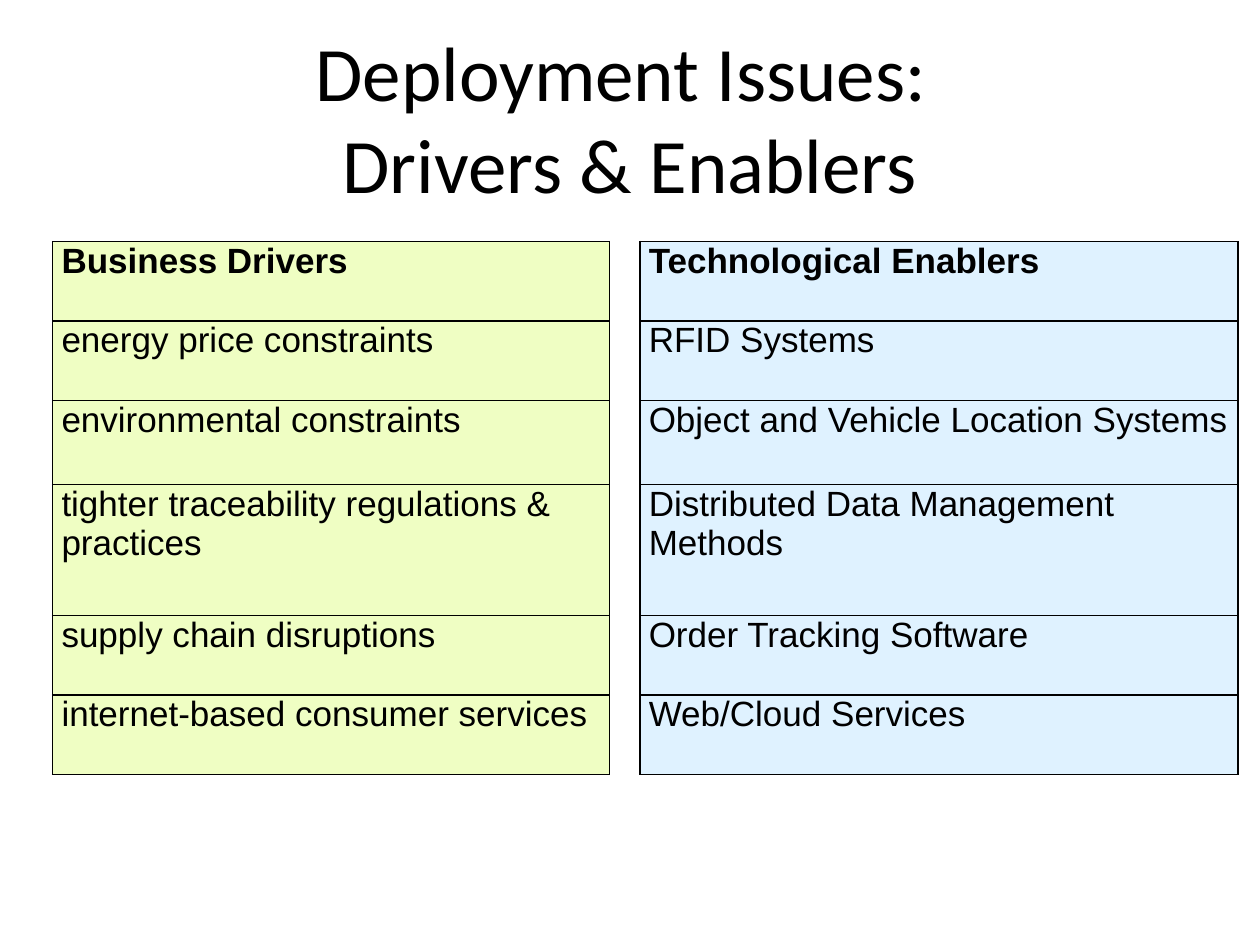
from dataclasses import dataclass

from lxml import etree
from pptx import Presentation
from pptx import util as u
from pptx.dml import color
from pptx.enum import text
from pptx.oxml import ns


@dataclass(frozen=True)
class Theme:
    ink: str = "000000"
    drivers: str = "EFFEC3"
    enablers: str = "DFF2FF"
    title_font: str = "Calibri"
    table_font: str = "Arial"
    title_size: int = 44
    table_size: int = 20
    border: int = 1


THEME = Theme()
TITLE = "Deployment Issues: \vDrivers & Enablers"
ROWS = [
    ("Business Drivers", "Technological Enablers"),
    ("energy price constraints", "RFID Systems"),
    ("environmental constraints", "Object and Vehicle Location Systems"),
    ("tighter traceability regulations & practices",
     "Distributed Data Management Methods"),
    ("supply chain disruptions", "Order Tracking Software"),
    ("internet-based consumer services", "Web/Cloud Services"),
]
COLUMN_WIDTHS = (11.23, 0.46, 12.06)
ROW_HEIGHTS = (1.6, 1.6, 1.7, 2.64, 1.6, 1.6)


def style_font(font, name, size, bold=False):
    font.name, font.size, font.bold = name, u.Pt(size), bold
    font.color.rgb = color.RGBColor.from_string(THEME.ink)


def add_title(page):
    box = page.shapes.add_textbox(u.Cm(1.27), u.Cm(0.76), u.Cm(22.86), u.Cm(3.18))
    frame = box.text_frame
    frame.word_wrap = True
    frame.vertical_anchor = text.MSO_ANCHOR.MIDDLE
    para = frame.paragraphs[0]
    para.text = TITLE
    para.alignment = text.PP_ALIGN.CENTER
    style_font(para.font, THEME.title_font, THEME.title_size)


def set_borders(cell, drawn_sides):
    properties = cell._tc.get_or_add_tcPr()
    for side in "LRTB":
        line = etree.SubElement(properties, ns.qn(f"a:ln{side}"),
                                w=str(u.Pt(THEME.border)))
        if side in drawn_sides:
            fill = etree.SubElement(line, ns.qn("a:solidFill"))
            etree.SubElement(fill, ns.qn("a:srgbClr"), val=THEME.ink)
        else:
            etree.SubElement(line, ns.qn("a:noFill"))


def fill_cell(cell, words, fill_color, heading):
    set_borders(cell, "LRTB")
    cell.fill.solid()
    cell.fill.fore_color.rgb = color.RGBColor.from_string(fill_color)
    cell.margin_left = cell.margin_right = u.Cm(0.18)
    cell.margin_top = cell.margin_bottom = 0
    para = cell.text_frame.paragraphs[0]
    para.text = words
    para.alignment = text.PP_ALIGN.JUSTIFY if heading else text.PP_ALIGN.LEFT
    para.space_before, para.space_after = u.Pt(2), u.Pt(6)
    style_font(para.font, THEME.table_font, THEME.table_size, heading)


def add_issue_table(page):
    table = page.shapes.add_table(
        len(ROWS), len(COLUMN_WIDTHS), u.Cm(1.06), u.Cm(4.87),
        u.Cm(sum(COLUMN_WIDTHS)), u.Cm(sum(ROW_HEIGHTS))).table
    table.first_row = table.horz_banding = False
    for column, width in zip(table.columns, COLUMN_WIDTHS):
        column.width = u.Cm(width)
    for index, (driver, enabler) in enumerate(ROWS):
        table.rows[index].height = u.Cm(ROW_HEIGHTS[index])
        heading = index == 0
        fill_cell(table.cell(index, 0), driver, THEME.drivers, heading)
        fill_cell(table.cell(index, 2), enabler, THEME.enablers, heading)
        # The narrow middle column only separates the two lists
        gap = table.cell(index, 1)
        set_borders(gap, "LR")
        gap.fill.background()


def main():
    deck = Presentation()
    deck.slide_width, deck.slide_height = u.Cm(25.4), u.Cm(19.05)
    page = deck.slides.add_slide(deck.slide_layouts[6])
    # Heading
    add_title(page)
    # Drivers and enablers side by side
    add_issue_table(page)
    deck.save("out.pptx")


if __name__ == "__main__":
    main()
